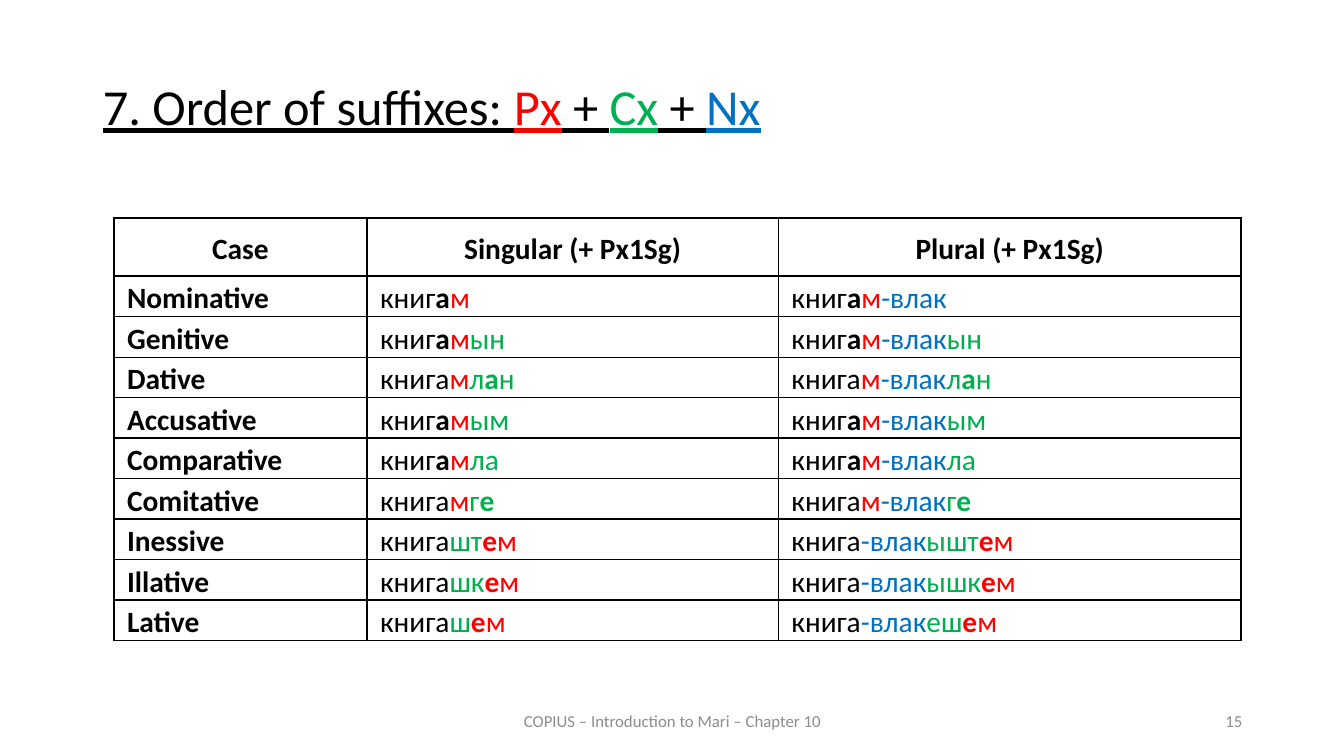
from lxml import etree
from pptx import Presentation
from pptx.dml.color import RGBColor
from pptx.enum import text
from pptx.oxml.ns import qn
from pptx.util import Inches, Pt

BLACK, RED, GREEN, BLUE, GRAY = "000000", "FF0000", "00B050", "0070C0", "8C8C8C"

# Style codes: k stem, r possessive, g case, b number; a capital means bold
COLORS = {"k": BLACK, "r": RED, "g": GREEN, "b": BLUE}

TITLE = [("7. Order of suffixes: ", BLACK), ("Px", RED), (" + ", BLACK),
         ("Cx", GREEN), (" + ", BLACK), ("Nx", BLUE)]
HEADERS = ["Case", "Singular (+ Px1Sg)", "Plural (+ Px1Sg)"]
FORMS = [
    ("Nominative", "k:книг K:а r:м", "k:книг K:а r:м b:-влак"),
    ("Genitive", "k:книг K:а r:м g:ын", "k:книг K:а r:м b:-влак g:ын"),
    ("Dative", "k:книга r:м g:л G:а g:н", "k:книга r:м b:-влак g:л G:а g:н"),
    ("Accusative", "k:книг K:а r:м g:ым", "k:книг K:а r:м b:-влак g:ым"),
    ("Comparative", "k:книг K:а r:м g:ла", "k:книг K:а r:м b:-влак g:ла"),
    ("Comitative", "k:книга r:м g:г G:е", "k:книга r:м b:-влак g:г G:е"),
    ("Inessive", "k:книга g:шт R:е r:м", "k:книга b:-влак g:ышт R:е r:м"),
    ("Illative", "k:книга g:шк R:е r:м", "k:книга b:-влак g:ышк R:е r:м"),
    ("Lative", "k:книга g:ш R:е r:м", "k:книга b:-влак g:еш R:е r:м"),
]
COL_WIDTHS = [2.51, 4.08, 4.59]
ROW_HEIGHTS = [0.58] + [0.4] * len(FORMS)


def rgb(color):
    return RGBColor.from_string(color)


def add_run(p, words, size, color, bold=False, underline=False):
    r = p.add_run()
    r.text = words
    r.font.name = "Calibri"
    r.font.size = Pt(size)
    r.font.bold = bold
    r.font.underline = underline
    r.font.color.rgb = rgb(color)


def add_title(s):
    sp = s.shapes.title
    sp.left, sp.top = Inches(0.92), Inches(0.76)
    sp.width, sp.height = Inches(11.5), Inches(0.68)
    tf = sp.text_frame
    tf.auto_size = text.MSO_AUTO_SIZE.NONE
    tf.vertical_anchor = text.MSO_ANCHOR.TOP
    p = tf.paragraphs[0]
    p.alignment = text.PP_ALIGN.JUSTIFY
    p.line_spacing = 0.9
    p.space_before = Pt(12)
    for words, color in TITLE:
        add_run(p, words, 36, color, underline=True)


def add_footer(s, words, left, width, align):
    sp = s.shapes.add_textbox(Inches(left), Inches(6.95), Inches(width), Inches(0.4))
    tf = sp.text_frame
    tf.word_wrap = True
    tf.vertical_anchor = text.MSO_ANCHOR.MIDDLE
    p = tf.paragraphs[0]
    p.alignment = align
    add_run(p, words, 12, GRAY)


def set_borders(cell, widths):
    """Draw left, right, top and bottom borders of the given point widths."""
    tc_pr = cell._tc.get_or_add_tcPr()
    for i, (side, width) in enumerate(zip(("lnL", "lnR", "lnT", "lnB"), widths)):
        ln = etree.Element(qn("a:" + side), w=str(Pt(width)))
        fill = etree.SubElement(ln, qn("a:solidFill"))
        etree.SubElement(fill, qn("a:srgbClr"), val=BLACK)
        tc_pr.insert(i, ln)


def format_cell(cell):
    cell.fill.background()
    cell.vertical_anchor = text.MSO_ANCHOR.MIDDLE
    cell.margin_left = cell.margin_right = Inches(0.13)
    cell.margin_top, cell.margin_bottom = Inches(0.02), 0
    p = cell.text_frame.paragraphs[0]
    p.line_spacing = 1.07
    return p


def add_case_table(s):
    last_row, last_col = len(FORMS), len(HEADERS) - 1
    frame = s.shapes.add_table(last_row + 1, last_col + 1, Inches(1.13), Inches(2.16),
                               Inches(sum(COL_WIDTHS)), Inches(sum(ROW_HEIGHTS)))
    table = frame.table
    table.first_row = table.horz_banding = False
    for column, width in zip(table.columns, COL_WIDTHS):
        column.width = Inches(width)
    for row, height in zip(table.rows, ROW_HEIGHTS):
        row.height = Inches(height)

    for i, entries in enumerate([HEADERS] + FORMS):
        for j, entry in enumerate(entries):
            cell = table.cell(i, j)
            p = format_cell(cell)
            if i == 0 or j == 0:
                p.alignment = text.PP_ALIGN.CENTER if i == 0 else text.PP_ALIGN.LEFT
                add_run(p, entry, 21, BLACK, bold=True)
            else:
                for part in entry.split():
                    code, letters = part.split(":")
                    add_run(p, letters, 21, COLORS[code.lower()], bold=code.isupper())
            # Thick outer frame and header rule, thin inner lines
            thick = (j == 0, j == last_col, i <= 1, i in (0, last_row))
            set_borders(cell, [1.5 if edge else 1 for edge in thick])


def main():
    prs = Presentation()
    prs.slide_width, prs.slide_height = Inches(13.33), Inches(7.5)
    s = prs.slides.add_slide(prs.slide_layouts[5])
    add_title(s)
    add_case_table(s)
    add_footer(s, "COPIUS – Introduction to Mari – Chapter 10", 4.42, 4.5,
               text.PP_ALIGN.CENTER)
    add_footer(s, "15", 9.42, 3, text.PP_ALIGN.RIGHT)
    prs.save("out.pptx")


if __name__ == "__main__":
    main()
